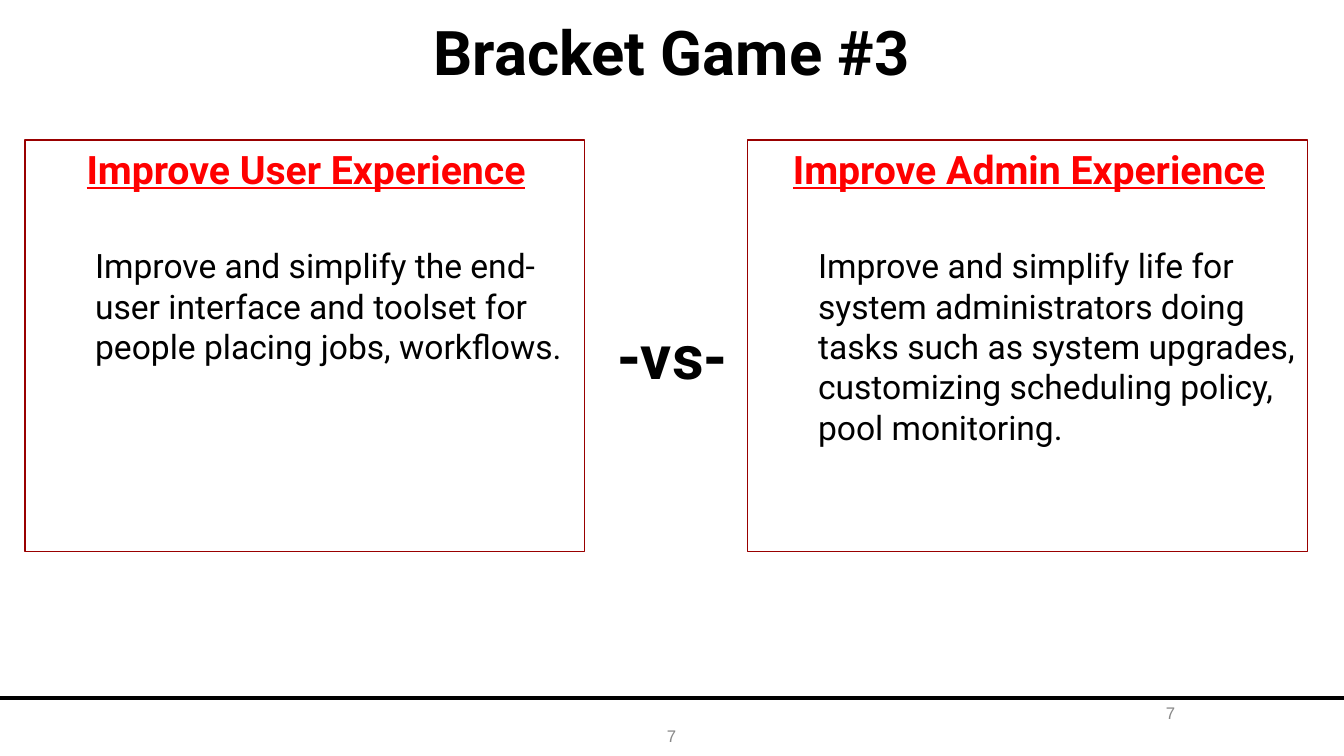
from lxml import etree
from pptx import Presentation, util as u
from pptx.dml.color import RGBColor
from pptx.enum import shapes, text
from pptx.oxml.ns import qn

BLACK = RGBColor(0, 0, 0)
RED = RGBColor(255, 0, 0)
MAROON = RGBColor(0x99, 0, 0)
GRAY = RGBColor(0x88, 0x88, 0x88)

TITLE = "Bracket Game #3"
SIDES = [
    ("Improve User Experience",
     "Improve and simplify the end-user interface and toolset for "
     "people placing jobs, workflows."),
    ("Improve Admin Experience",
     "Improve and simplify life for system administrators doing tasks such "
     "as system upgrades, customizing scheduling policy, pool monitoring."),
]

BIG = dict(name="Roboto", size=u.Pt(44), bold=True, color=BLACK)
HEAD = dict(name="Roboto", size=u.Pt(28), bold=True, underline=True, color=RED)
BODY = dict(name="Roboto", size=u.Pt(24), bold=False, color=BLACK)
PAGE = dict(name="Arial", size=u.Pt(12), color=GRAY)

# text, box in px, format
LABELS = [
    ("7", (515, 716, 313, 40), PAGE),
    ("7", (1098, 688, 145, 50), PAGE),
    ("-vs-", (596, 304, 153, 101), BIG),
]

WIDE, HIGH = 1344, 756
LEFT, TOP, CARD_W, CARD_H, STEP = 25, 140, 560, 412, 723
RULE_Y = 698


def px(n):
    return u.Emu(round(n * 914400 / 100.8))


def place(shape, box):
    shape.left, shape.top, shape.width, shape.height = map(px, box)


def style(para, form):
    for key, value in form.items():
        if key == "color":
            para.font.color.rgb = value
        else:
            setattr(para.font, key, value)


def write(shape, words, form):
    """Put one centred line in the middle of the shape."""
    frame = shape.text_frame
    frame.word_wrap = True
    frame.auto_size = text.MSO_AUTO_SIZE.NONE
    frame.vertical_anchor = text.MSO_ANCHOR.MIDDLE
    para = frame.paragraphs[0]
    para.text = words
    para.alignment = text.PP_ALIGN.CENTER
    style(para, form)


def fill(card, head, body):
    """Write a heading and an indented text, both without bullets."""
    frame = card.text_frame
    frame.word_wrap = True
    frame.auto_size = text.MSO_AUTO_SIZE.NONE
    frame.vertical_anchor = text.MSO_ANCHOR.TOP
    rows = [
        (head, HEAD, text.PP_ALIGN.CENTER, 2, 0),
        (body, BODY, text.PP_ALIGN.LEFT, 60, 38),
    ]
    frame.text = "\n".join(row[0] for row in rows)
    for para, (_, form, align, indent, gap) in zip(frame.paragraphs, rows):
        para.alignment = align
        para.space_before = u.Pt(gap)
        props = para._p.get_or_add_pPr()
        props.set("marL", str(px(indent)))
        props.set("indent", "0")
        etree.SubElement(props, qn("a:buNone"))
        style(para, form)


def main():
    deck = Presentation()
    deck.slide_width, deck.slide_height = px(WIDE), px(HIGH)
    slide = deck.slides.add_slide(deck.slide_layouts.get_by_name("Two Content"))
    title, *cards = slide.placeholders

    rule = slide.shapes.add_connector(
        shapes.MSO_CONNECTOR.STRAIGHT, 0, px(RULE_Y), px(WIDE), px(RULE_Y))
    rule.line.color.rgb = BLACK
    rule.line.width = u.Pt(2.25)
    etree.SubElement(rule._element.spPr, qn("a:effectLst"))

    place(title, (0, 0, WIDE, 101))
    write(title, TITLE, BIG)

    for i, (card, side) in enumerate(zip(cards, SIDES)):
        place(card, (LEFT + i * STEP, TOP, CARD_W, CARD_H))
        card.line.color.rgb = MAROON
        card.line.width = u.Pt(0.75)
        fill(card, *side)

    for words, box, form in LABELS:
        write(slide.shapes.add_textbox(*map(px, box)), words, form)

    deck.save("out.pptx")


if __name__ == "__main__":
    main()
